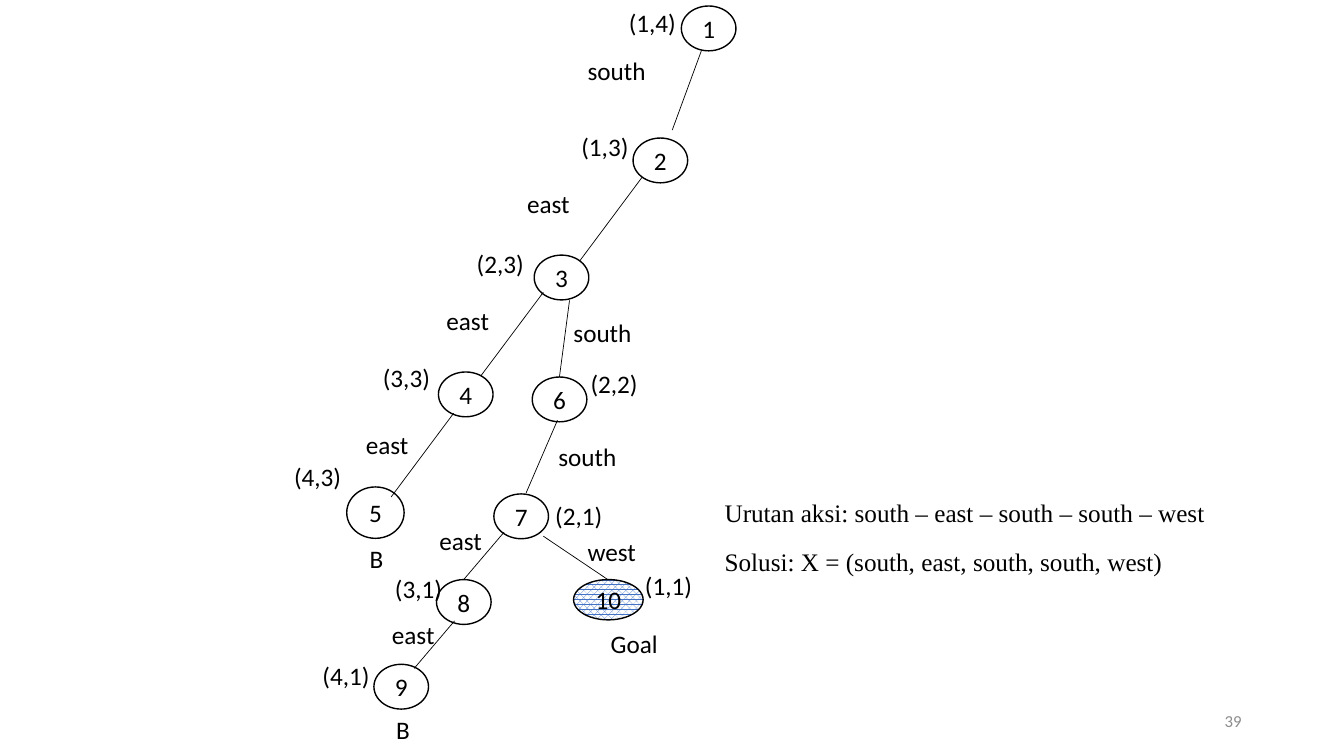
from lxml.etree import SubElement
from pptx import Presentation
from pptx.dml.color import RGBColor
from pptx.enum.dml import MSO_PATTERN
from pptx.enum.shapes import MSO_CONNECTOR, MSO_SHAPE
from pptx.enum.text import MSO_ANCHOR, PP_ALIGN
from pptx.oxml.ns import qn
from pptx.util import Pt

BLACK = RGBColor(0, 0, 0)
WHITE = RGBColor(255, 255, 255)
BLUE = RGBColor(0x44, 0x72, 0xC4)
GREY = RGBColor(0x8C, 0x8C, 0x8C)

NODE_SIZE = (39, 32)
SPECIAL_SIZES = {"5": (41, 36.7), "10": (49.7, 28.8)}
GOAL_NODE = "10"

# node, left and top, state, left and top of the state
NODES = [
    ("1", (486.7, 4.3), "(1,4)", (442.1, 1.4)),
    ("2", (452.2, 98.6), "(1,3)", (408.2, 90)),
    ("3", (381.6, 182.2), "(2,3)", (333.4, 173.5)),
    ("4", (313.2, 265.7), "(3,3)", (266.4, 255.6)),
    ("5", (247.7, 347.8), "(4,3)", (203, 326.2)),
    ("6", (380.2, 269.3), "(2,2)", (414.7, 259.2)),
    ("7", (352.8, 352.8), "(2,1)", (389.5, 354.2)),
    ("8", (311.8, 414), "(3,1)", (275, 406.1)),
    ("9", (267.1, 474.5), "(4,1)", (223.2, 468)),
    ("10", (409.7, 414), "(1,1)", (453.6, 403.9)),
]

# start, end, action, left and top of the action
EDGES = [
    ((501.1, 36), (480.2, 92.9), "south", (412.6, 36)),
    ((458.6, 126.7), (414, 186.5), "east", (369.4, 131)),
    ((388.1, 208.8), (343.4, 268.6), "east", (311.8, 214.6)),
    ((324, 295.2), (279.4, 355), "east", (254.2, 303.1)),
    ((406.8, 214.6), (399.6, 269.3), "south", (402.5, 223.2)),
    ((398.2, 300.2), (375.8, 352.1), "south", (391.7, 311.8)),
    ((360, 380.2), (331.2, 414), "east", (306.7, 371.5)),
    ((324.7, 443.5), (295.9, 477.4), "east", (272.9, 438.5)),
    ((388.1, 383), (434.2, 414), "west", (412.6, 379.4)),
]

OUTCOMES = [("B", (257, 384.5)), ("B", (275.8, 506.9)), ("Goal", (429.1, 445))]

LABEL_HEIGHT = 28.8
STATE_WIDTH = 49
LABEL_WIDTHS = {"south": 56.2, "east": 45.4, "west": 49.7, "Goal": 48.2, "B": 22.3}

SOLUTION = [
    "Urutan aksi: south – east – south – south – west",
    "Solusi: X = (south, east, south, south, west)",
]
PAGE_NUMBER = "39"


def add_span(para, text, size=18, color=BLACK, font="Calibri"):
    span = para.add_run()
    span.text = text
    span.font.name = font
    span.font.size = Pt(size)
    span.font.color.rgb = color


def add_box(page, left, top, width, height):
    return page.shapes.add_textbox(Pt(left), Pt(top), Pt(width), Pt(height))


def add_label(page, text, position):
    box = add_box(page, *position, LABEL_WIDTHS.get(text, STATE_WIDTH), LABEL_HEIGHT)
    box.text_frame.word_wrap = False
    add_span(box.text_frame.paragraphs[0], text)


def add_edge(page, start, end):
    edge = page.shapes.add_connector(
        MSO_CONNECTOR.STRAIGHT, *(Pt(value) for value in start + end))
    edge.line.color.rgb = BLACK
    edge.line.width = Pt(0.5)
    SubElement(edge._element.spPr, qn("a:effectLst"))


def add_node(page, name, position):
    size = SPECIAL_SIZES.get(name, NODE_SIZE)
    node = page.shapes.add_shape(
        MSO_SHAPE.OVAL, *(Pt(value) for value in position + size))
    node.shadow.inherit = False
    if name == GOAL_NODE:
        node.fill.patterned()
        node.fill.pattern = MSO_PATTERN.PERCENT_70
        node.fill.fore_color.rgb = BLUE
        node.fill.back_color.rgb = WHITE
    else:
        node.fill.background()
    node.line.color.rgb = BLACK
    node.line.width = Pt(1)
    node.text_frame.vertical_anchor = MSO_ANCHOR.MIDDLE
    para = node.text_frame.paragraphs[0]
    para.alignment = PP_ALIGN.CENTER
    add_span(para, name)


def add_solution(page):
    frame = add_box(page, 474.5, 348.5, 406, 66).text_frame
    frame.word_wrap = True
    for index, text in enumerate(SOLUTION):
        para = frame.add_paragraph() if index else frame.paragraphs[0]
        para._p.get_or_add_pPr().set("marL", str(Pt(36)))
        para.line_spacing = 1.15
        para.space_after = Pt(10)
        add_span(para, text, font="Times New Roman")


def add_page_number(page):
    frame = add_box(page, 678, 500.4, 216, LABEL_HEIGHT).text_frame
    frame.word_wrap = True
    frame.vertical_anchor = MSO_ANCHOR.MIDDLE
    para = frame.paragraphs[0]
    para.alignment = PP_ALIGN.RIGHT
    add_span(para, PAGE_NUMBER, 12, GREY)


def main():
    deck = Presentation()
    deck.slide_width, deck.slide_height = Pt(960), Pt(540)
    page = deck.slides.add_slide(deck.slide_layouts[6])
    for name, position, state, state_position in NODES:
        add_node(page, name, position)
        add_label(page, state, state_position)
    for start, end, action, action_position in EDGES:
        add_edge(page, start, end)
        add_label(page, action, action_position)
    for text, position in OUTCOMES:
        add_label(page, text, position)
    add_solution(page)
    add_page_number(page)
    deck.save("out.pptx")


if __name__ == "__main__":
    main()
